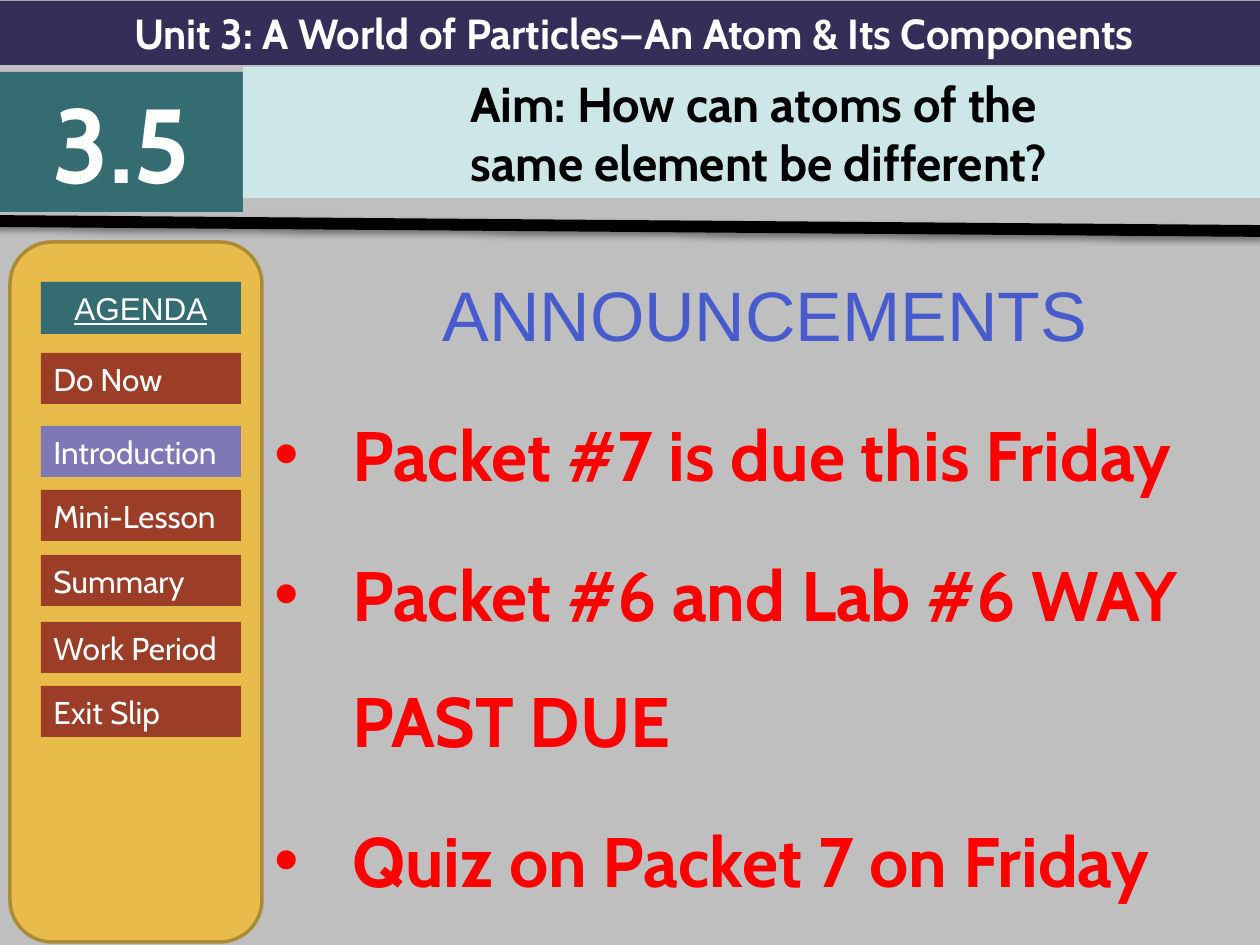
import pptx
import pptx.util
import pptx.oxml.ns
import pptx.dml.color
import pptx.enum.shapes
import pptx.enum.text
from lxml import etree

SCALE = 914400 / 126  # EMU per px
HUES = {
    "back": "BFBFBF", "navy": "342F59", "teal": "346C71", "pale": "CDE6E8",
    "gold": "E8BC4A", "edge": "AC8B37", "rust": "9C3D28", "lilac": "7E78B7",
    "blue": "475BCD", "red": "FF0000", "white": "FFFFFF", "black": "000000",
}
KIND = pptx.enum.shapes.MSO_SHAPE
ALIGN = pptx.enum.text.PP_ALIGN
MIDDLE = pptx.enum.text.MSO_ANCHOR.MIDDLE


def emu(*nums):
    return [pptx.util.Emu(round(n * SCALE)) for n in nums]


def hue(name):
    return pptx.dml.color.RGBColor.from_string(HUES[name])


def node(parent, tag, **attrs):
    return etree.SubElement(parent, pptx.oxml.ns.qn("a:" + tag), attrs)


def write(para, text, color, align=ALIGN.CENTER, **form):
    para.alignment = align
    run = para.add_run()
    run.text = text
    run.font.color.rgb = hue(color)
    for key, val in form.items():
        setattr(run.font, key, pptx.util.Pt(val) if key == "size" else val)


def paint(shape, fill, edge=None):
    shape.fill.solid()
    shape.fill.fore_color.rgb = hue(fill)
    if edge:
        shape.line.color.rgb = hue(edge)
        shape.line.width = pptx.util.Pt(2)
    else:
        shape.line.fill.background()


def fill_text(shape, lines, color, **form):
    frame = shape.text_frame
    frame.word_wrap = True
    frame.auto_size = pptx.enum.text.MSO_AUTO_SIZE.NONE
    frame.vertical_anchor = MIDDLE
    for i, line in enumerate(lines):
        para = frame.add_paragraph() if i else frame.paragraphs[0]
        write(para, line, color, **form)


def panel(shapes, box, fill, kind=KIND.RECTANGLE, edge=None):
    shape = shapes.add_shape(kind, *emu(*box))
    shape.shadow.inherit = False
    paint(shape, fill, edge)
    return shape


def header(slide, box):
    x, y, wide, _ = box
    # Unit bar
    title = slide.shapes.title
    title.left, title.top, title.width, title.height = emu(x, y, wide, 64)
    paint(title, "navy")
    bold = {"name": "Cabin", "bold": True}
    fill_text(title, ["Unit 3: A World of Particles—An Atom & Its Components"],
              "white", size=24, **bold)
    # Lesson number
    num = panel(slide.shapes, (x, y + 71, 243, 140), "teal")
    fill_text(num, ["3.5"], "white", size=60, **bold)
    # Aim
    aim = panel(slide.shapes, (x + 243, y + 66, wide - 247, 131), "pale")
    fill_text(aim, ["Aim: How can atoms of the", " same element be different?"],
              "black", size=28, **bold)


def rule(slide, start, end):
    line = slide.shapes.add_connector(
        pptx.enum.shapes.MSO_CONNECTOR.STRAIGHT, *emu(*start, *end))
    line.line.color.rgb = hue("black")
    line.line.width = pptx.util.Pt(6.75)
    # Soft shadow straight below
    effects = node(line._element.spPr, "effectLst")
    shade = node(effects, "outerShdw", blurRad="39370", dist="20320",
                 dir="5400000", rotWithShape="0")
    node(node(shade, "srgbClr", val=HUES["black"]), "alpha", val="38000")


def agenda(slide, box):
    x, y, _, _ = box
    group = slide.shapes.add_group_shape()
    panel(group.shapes, box, "gold", KIND.ROUNDED_RECTANGLE, "edge")
    head = panel(group.shapes, (x + 31, y + 40, 200, 52), "teal")
    fill_text(head, ["AGENDA"], "white", name="Arial", size=18, underline=True)
    steps = [("Do Now", 111), ("Introduction", 184), ("Mini-Lesson", 248),
             ("Summary", 313), ("Work Period", 380), ("Exit Slip", 444)]
    for text, top in steps:
        fill = "lilac" if text == "Introduction" else "rust"
        step = panel(group.shapes, (x + 31, y + top, 200, 51), fill)
        fill_text(step, [text], "white", align=ALIGN.LEFT, name="Cabin", size=18)


def space(para, lines):
    para.line_spacing = lines
    props = para._p.get_or_add_pPr()
    node(node(props, "spcBef"), "spcPct", val="20000")
    return props


def news(slide, box):
    frame = slide.shapes.add_textbox(*emu(*box)).text_frame
    frame.word_wrap = True
    # Heading
    head = frame.paragraphs[0]
    space(head, 1.1)
    write(head, "ANNOUNCEMENTS", "blue", name="Arial", size=40)
    # Bullets
    indent = emu(78)[0]
    for text in ("Packet #7 is due this Friday",
                 "Packet #6 and Lab #6 WAY PAST DUE",
                 "Quiz on Packet 7 on Friday"):
        para = frame.add_paragraph()
        props = space(para, 1.5)
        props.set("marL", str(indent))
        props.set("indent", str(-indent))
        node(props, "buFont", typeface="Arial")
        node(props, "buChar", char="•")
        write(para, text, "red", ALIGN.LEFT, name="Cabin", size=40, bold=True)


def main():
    deck = pptx.Presentation()
    deck.slide_width, deck.slide_height = emu(1260, 945)
    slide = deck.slides.add_slide(deck.slide_layouts[5])
    slide.background.fill.solid()
    slide.background.fill.fore_color.rgb = hue("back")
    news(slide, (262, 257, 1006, 688))
    header(slide, (0, 1, 1268, 211))
    rule(slide, (-6, 221), (1260, 231))
    agenda(slide, (10, 242, 252, 700))
    deck.save("out.pptx")


if __name__ == "__main__":
    main()
